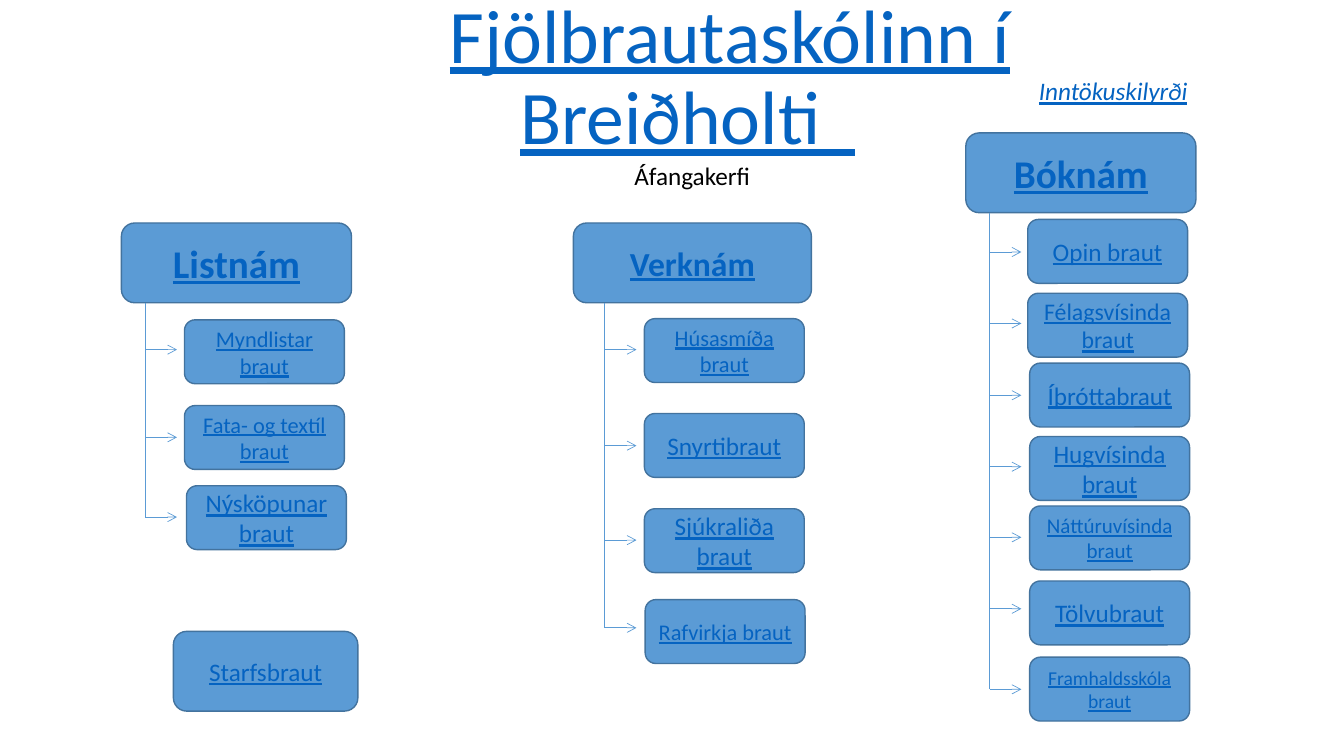
"""Builds the slide showing the school's study programmes as three branching lists."""
from pptx import Presentation
from pptx.dml.color import RGBColor
from pptx.enum.shapes import MSO_CONNECTOR, MSO_SHAPE
from pptx.enum.text import MSO_ANCHOR, MSO_AUTO_SIZE, PP_ALIGN
from pptx.oxml.ns import qn
from pptx.util import Cm, Pt
from lxml.etree import SubElement

COLOURS = {"fill": "5B9BD5", "border": "43739E", "link": "0563C1", "text": "000000"}
FONT = "Calibri"

TITLE = "Fjölbrautaskólinn í Breiðholti  "
TITLE_BOX = (5.92, 1.22, 22.81, 2.97)
TITLE_INDENT = 2.15
SYSTEM = ("Áfangakerfi", (15.72, 3.91, 3.45, 1.02))
ADMISSION = ("Inntökuskilyrði", (25.93, 1.78, 4.6, 1.02))
SPECIAL = ("Starfsbraut", (4.37, 15.91, 4.65, 2.01))

HEADER_HEIGHT = 2.01
PROGRAMME_SIZE = (4.03, 1.61)
ARROW_LENGTH = 0.8

# name, size, left, top, width, trunk x, programmes (name, size, left, top, arrow y)
BRANCHES = [
    ("Listnám", 28, 3.06, 5.62, 5.8, 3.66, [
        ("Myndlistar braut", 16, 4.65, 8.06, 8.81),
        ("Fata- og textíl braut", 16, 4.65, 10.22, 11.02),
        ("Nýsköpunarbraut", 18, 4.7, 12.24, 13.03),
    ]),
    ("Verknám", 24, 14.45, 5.62, 6, 15.24, [
        ("Húsasmíða\nbraut", 16, 16.24, 8.03, 8.81),
        ("Snyrtibraut", 18, 16.24, 10.42, 11.23),
        ("Sjúkraliða\nbraut", 18, 16.24, 12.82, 13.61),
        ("Rafvirkja braut", 16, 16.26, 15.11, 15.82),
    ]),
    ("Bóknám", 28, 24.34, 3.35, 5.8, 24.94, [
        ("Opin braut", 18, 25.9, 5.53, 6.35),
        ("Félagsvísinda braut", 17, 25.9, 7.39, 8.15),
        ("Íþróttabraut", 18, 25.95, 9.15, 9.96),
        ("Hugvísinda braut", 18, 25.95, 11, 11.76),
        ("Náttúruvísinda braut", 15, 25.95, 12.75, 13.54),
        ("Tölvubraut", 18, 25.95, 14.64, 15.34),
        ("Framhaldsskóla braut", 14, 25.95, 16.56, 17.37),
    ]),
]


def colour(name):
    return RGBColor.from_string(COLOURS[name])


def write(frame, text, size, shade="link", align=PP_ALIGN.CENTER, bold=False, italic=False):
    frame.text = text
    for paragraph in frame.paragraphs:
        paragraph.alignment = align
        font = paragraph.font
        font.name, font.size = FONT, Pt(size)
        font.bold, font.italic = bold, italic
        font.underline = shade == "link"
        font.color.rgb = colour(shade)


def add_box(slide, text, size, place, bold=False):
    box = slide.shapes.add_shape(MSO_SHAPE.ROUNDED_RECTANGLE, *map(Cm, place))
    box.shadow.inherit = False
    box.fill.solid()
    box.fill.fore_color.rgb = colour("fill")
    box.line.color.rgb = colour("border")
    box.line.width = Pt(1)
    box.text_frame.word_wrap = True
    box.text_frame.vertical_anchor = MSO_ANCHOR.MIDDLE
    write(box.text_frame, text, size, bold=bold)


def add_line(slide, start, end, arrow=False):
    line = slide.shapes.add_connector(MSO_CONNECTOR.STRAIGHT, *map(Cm, start + end))
    line.line.color.rgb = colour("fill")
    line.line.width = Pt(0.5)
    properties = line._element.spPr
    if arrow:
        SubElement(properties.find(qn("a:ln")), qn("a:tailEnd"), type="arrow")
    SubElement(properties, qn("a:effectLst"))


def add_label(slide, label, shade, align, wrap, italic=False):
    text, place = label
    frame = slide.shapes.add_textbox(*map(Cm, place)).text_frame
    frame.word_wrap = wrap
    write(frame, text, 18, shade, align, italic=italic)


def add_title(slide):
    title = slide.shapes.title
    title.left, title.top, title.width, title.height = map(Cm, TITLE_BOX)
    frame = title.text_frame
    frame.word_wrap = True
    frame.auto_size = MSO_AUTO_SIZE.NONE
    frame.vertical_anchor = MSO_ANCHOR.BOTTOM
    write(frame, TITLE, 54)
    paragraph = frame.paragraphs[0]
    paragraph.line_spacing = 0.9
    paragraph._p.get_or_add_pPr().set("indent", str(Cm(TITLE_INDENT)))


def add_branch(slide, name, size, left, top, width, trunk, programmes):
    add_box(slide, name, size, (left, top, width, HEADER_HEIGHT), bold=True)
    add_line(slide, (trunk, top + HEADER_HEIGHT), (trunk, programmes[-1][-1]))
    for programme, text_size, box_left, box_top, arrow_y in programmes:
        add_line(slide, (trunk, arrow_y), (trunk + ARROW_LENGTH, arrow_y), arrow=True)
        add_box(slide, programme, text_size, (box_left, box_top) + PROGRAMME_SIZE)


def main():
    presentation = Presentation()
    presentation.slide_width, presentation.slide_height = Cm(33.87), Cm(19.05)
    slide = presentation.slides.add_slide(presentation.slide_layouts[5])
    add_title(slide)
    for branch in BRANCHES:
        add_branch(slide, *branch)
    add_box(slide, SPECIAL[0], 18, SPECIAL[1])
    add_label(slide, ADMISSION, "link", PP_ALIGN.LEFT, True, italic=True)
    add_label(slide, SYSTEM, "text", PP_ALIGN.CENTER, False)
    presentation.save("out.pptx")


if __name__ == "__main__":
    main()
